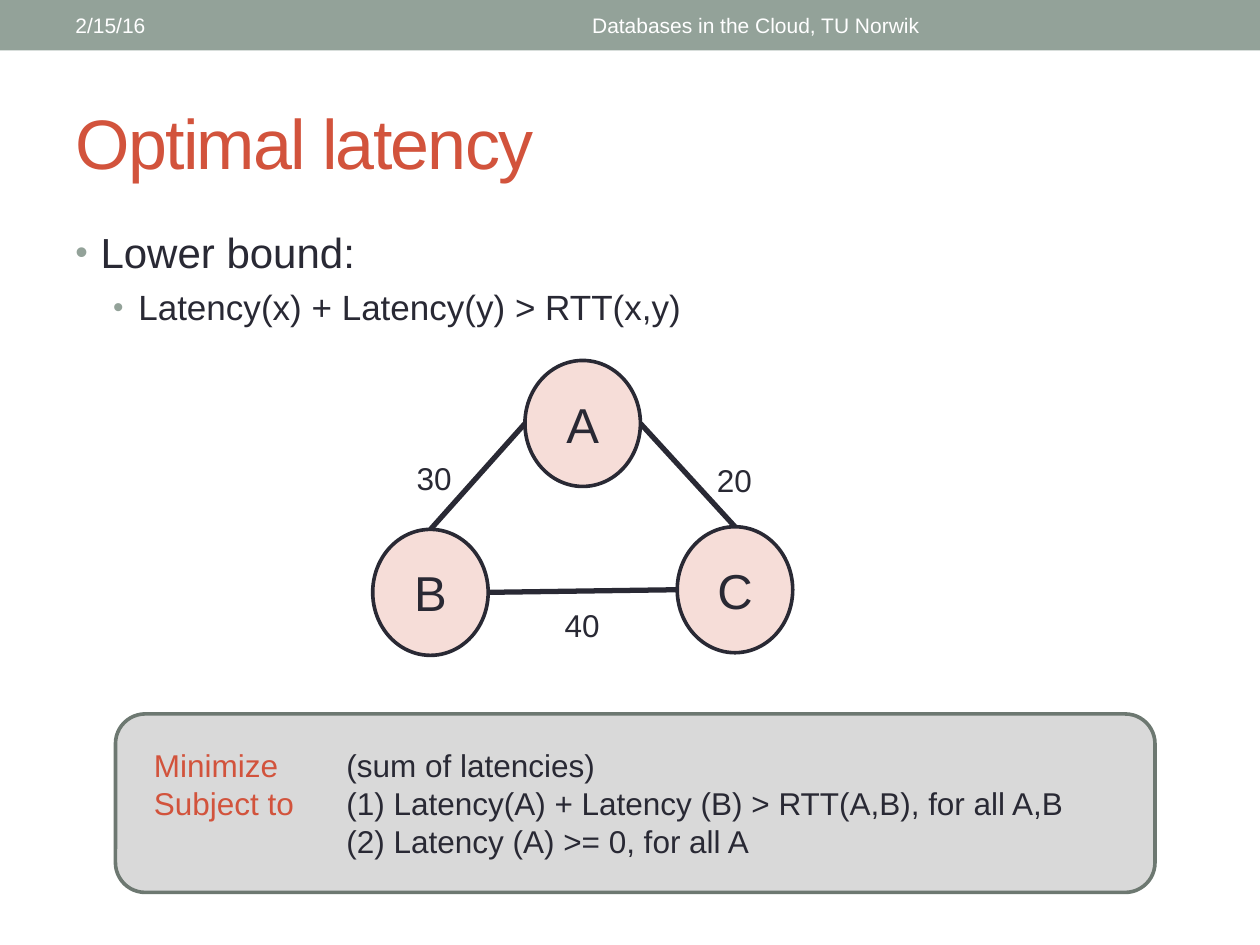
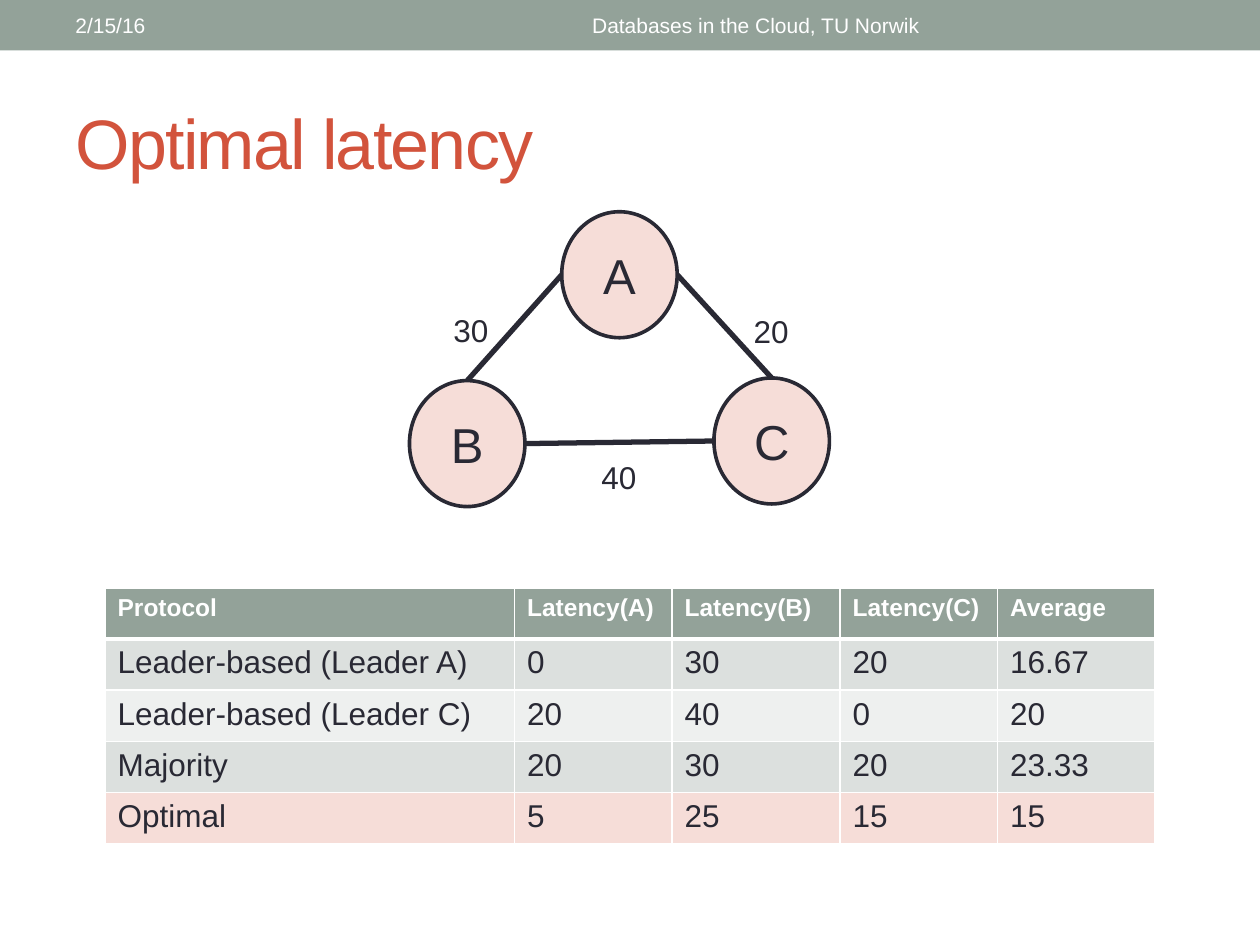
from lxml.etree import SubElement
from pptx import Presentation
from pptx.dml.color import RGBColor
from pptx.enum.shapes import MSO_CONNECTOR as Link, MSO_SHAPE as Shape
from pptx.enum.text import MSO_ANCHOR as Anchor, PP_ALIGN as Align
from pptx.oxml.ns import qn
from pptx.util import Pt

INK, RED, SAGE, WHITE = "292934", "D2533C", "93A299", "FFFFFF"
ROSE, GREY, EDGE = "F6DDD8", "D9D9D9", "6D7871"
DARK, PALE = "DCE0DE", "EEF0EF"


def rgb(code):
    return RGBColor.from_string(code)


def style(par, size, color, align=Align.LEFT, bold=False):
    par.alignment = align
    font = par.font
    font.name, font.size, font.bold = "Arial", Pt(size), bold
    font.color.rgb = rgb(color)


def node(root, tag, **attrs):
    return SubElement(root, qn("a:" + tag), attrs)


class Deck:
    """Holds the shared style and the current slide."""

    def __init__(self):
        self.file = Presentation()
        self.file.slide_width, self.file.slide_height = Pt(720), Pt(540)

    def start(self, title):
        self.slide = self.file.slides.add_slide(self.file.slide_layouts[5])
        self.shapes = self.slide.shapes
        self.shape(Shape.RECTANGLE, 0, 0, 720, 28.8, SAGE)
        self.text("2/15/16", 36, 1.5, 228, 26, 12, WHITE, mid=True)
        self.text("Databases in the Cloud, TU Norwik", 270, 1.5, 324, 26,
                  12, WHITE, Align.CENTER, mid=True)
        head = self.shapes.title
        head.left, head.top, head.width, head.height = map(
            Pt, (36, 42, 648, 78))
        frame = head.text_frame
        frame.text = title
        frame.vertical_anchor = Anchor.MIDDLE
        par = frame.paragraphs[0]
        style(par, 40, RED)
        par.runs[0]._r.get_or_add_rPr().set("spc", "-100")

    def shape(self, kind, x, y, w, h, fill, edge=None):
        item = self.shapes.add_shape(kind, Pt(x), Pt(y), Pt(w), Pt(h))
        item.shadow.inherit = False
        item.fill.solid()
        item.fill.fore_color.rgb = rgb(fill)
        if edge:
            item.line.color.rgb = rgb(edge)
            item.line.width = Pt(2.08)
        else:
            item.line.fill.background()
        return item

    def text(self, words, x, y, w, h, size, color=INK, align=Align.LEFT,
             mid=False, wrap=True):
        box = self.shapes.add_textbox(Pt(x), Pt(y), Pt(w), Pt(h))
        frame = box.text_frame
        frame.word_wrap = wrap
        frame.vertical_anchor = Anchor.MIDDLE if mid else Anchor.TOP
        frame.text = words
        for par in frame.paragraphs:
            style(par, size, color, align)
        return frame

    def points(self, items, x, y, w, h):
        frame = self.text("\n".join(item[0] for item in items),
                          x, y, w, h, 24)
        for par, (_, size, left, gap) in zip(frame.paragraphs, items):
            par.font.size = Pt(size)
            par.space_before = Pt(gap)
            props = par._p.get_or_add_pPr()
            props.set("marL", str(Pt(left)))
            props.set("indent", str(-Pt(14.4)))
            tint = node(props, "buClr")
            node(tint, "srgbClr", val=SAGE)
            marks = [tint, node(props, "buSzPct", val="85000"),
                     node(props, "buFont", typeface="Arial"),
                     node(props, "buChar", char="•")]
            base = props.find(qn("a:defRPr"))
            for mark in marks:
                base.addprevious(mark)

    def edge(self, x1, y1, x2, y2):
        line = self.shapes.add_connector(
            Link.STRAIGHT, Pt(x1), Pt(y1), Pt(x2), Pt(y2))
        line.line.color.rgb = rgb(INK)
        line.line.width = Pt(3)
        node(line._element.spPr, "effectLst")

    def graph(self, x, y):
        w, h = 66, 72
        spots = {"A": (x, y), "B": (x - 87, y + 96.5), "C": (x + 87, y + 95)}
        (bx, by), (cx, cy) = spots["B"], spots["C"]
        self.edge(x, y + h / 2, bx + w / 2, by)
        self.edge(x + w, y + h / 2, cx + w / 2, cy)
        self.edge(cx, cy + h / 2, bx + w, by + h / 2)
        for name, (left, top) in spots.items():
            ball = self.shape(Shape.OVAL, left, top, w, h, ROSE, INK)
            frame = ball.text_frame
            frame.text = name
            frame.vertical_anchor = Anchor.MIDDLE
            style(frame.paragraphs[0], 28, INK, Align.CENTER)
        for cost, dx, dy in (("30", -69, 53), ("20", 102.5, 54),
                             ("40", 15.5, 137)):
            self.text(cost, x + dx, y + dy, 34.5, 29, 18, wrap=False)

    def goal(self, rows, x, y, w, h):
        box = self.shape(Shape.ROUNDED_RECTANGLE, x, y, w, h, GREY, EDGE)
        frame = box.text_frame
        frame.margin_left = Pt(17)
        frame.vertical_anchor = Anchor.MIDDLE
        frame.text = "\n".join([""] * len(rows))
        for par, (key, words) in zip(frame.paragraphs, rows):
            tabs = node(par._p.get_or_add_pPr(), "tabLst")
            node(tabs, "tab", pos=str(Pt(110)), algn="l")
            style(par, 18, INK)
            if key:
                run = par.add_run()
                run.text = key
                run.font.color.rgb = rgb(RED)
            par.add_run().text = "\t" + words

    def table(self, rows, fills, cols, x, y, high):
        grid = self.shapes.add_table(
            len(rows), len(cols), Pt(x), Pt(y), Pt(sum(cols)),
            Pt(high * len(rows))).table
        for col, wide in zip(grid.columns, cols):
            col.width = Pt(wide)
        for r, (row, fill) in enumerate(zip(rows, fills)):
            grid.rows[r].height = Pt(high)
            for c, words in enumerate(row):
                cell = grid.cell(r, c)
                cell.text = words
                par = cell.text_frame.paragraphs[0]
                if r == 0:
                    style(par, 14, WHITE, bold=True)
                else:
                    style(par, 18, INK)
                self.frame(cell, 3 if r == 1 else 1, 3 if r == 0 else 1)
                cell.fill.solid()
                cell.fill.fore_color.rgb = rgb(fill)

    def frame(self, cell, top, base):
        props = cell._tc.get_or_add_tcPr()
        for side, wide in (("L", 1), ("R", 1), ("T", top), ("B", base)):
            line = node(props, "ln" + side, w=str(Pt(wide)))
            node(node(line, "solidFill"), "srgbClr", val=WHITE)


def main():
    deck = Deck()
    deck.start("Optimal latency")
    deck.points([("Lower bound:", 24, 14.4, 3),
                 ("Latency(x) + Latency(y) > RTT(x,y)", 20, 36, 5)],
                36, 126, 648, 384)
    deck.goal([("Minimize", "(sum of latencies)"),
               ("Subject to",
                "(1) Latency(A) + Latency (B) > RTT(A,B), for all A,B"),
               ("", "(2) Latency (A) >= 0, for all A")],
              66, 408, 594, 102)
    deck.graph(300, 206)

    deck.start("Optimal latency")
    deck.graph(321, 121)
    deck.table([("Protocol", "Latency(A)", "Latency(B)", "Latency(C)",
                 "Average"),
                ("Leader-based (Leader A)", "0", "30", "20", "16.67"),
                ("Leader-based (Leader C)", "20", "40", "0", "20"),
                ("Majority", "20", "30", "20", "23.33"),
                ("Optimal", "5", "25", "15", "15")],
               (SAGE, DARK, PALE, DARK, ROSE), (234, 90, 96, 90, 90),
               60, 336, 29.2)
    deck.file.save("out.pptx")


if __name__ == "__main__":
    main()
